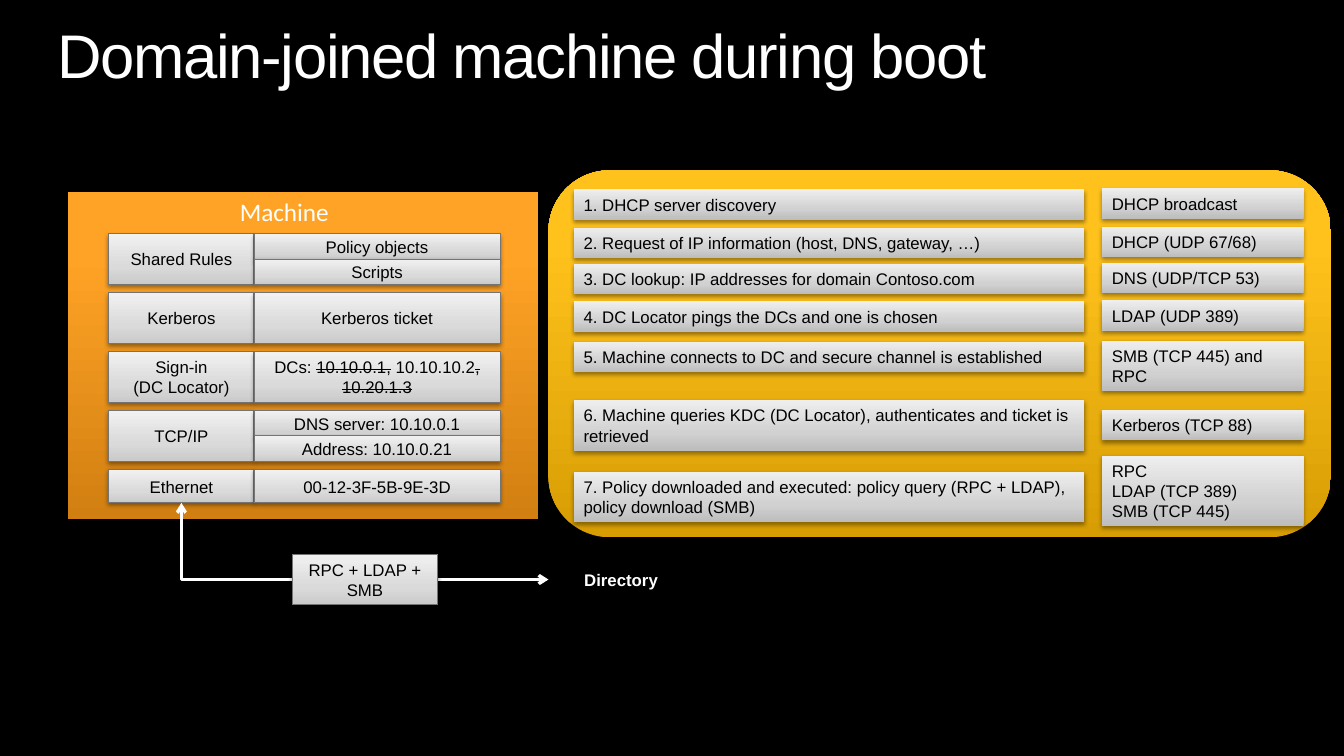
from copy import deepcopy

from lxml.etree import SubElement
from pptx import Presentation
from pptx.dml.color import RGBColor
from pptx.enum.shapes import MSO_CONNECTOR, MSO_SHAPE
from pptx.enum.text import MSO_ANCHOR, MSO_AUTO_SIZE, PP_ALIGN
from pptx.oxml.ns import qn
from pptx.util import Inches, Pt

BLACK = RGBColor(0x00, 0x00, 0x00)
WHITE = RGBColor(0xFF, 0xFF, 0xFF)
BOX_LINE = RGBColor(0x74, 0x74, 0x74)


def gradient(*stops):
    return [(position, RGBColor.from_string(color)) for position, color in stops]


ORANGE = gradient((0, "D17F11"), (0.8, "FFA326"), (1, "FFA327"))
GOLD = gradient((0, "D79D03"), (0.8, "FFC21C"), (1, "FFC21D"))
BOX_GREY = gradient((0, "CACACA"), (0.35, "DADADA"), (1, "F1F1F1"))
LABEL_GREY = gradient((0, "BDBDBD"), (0.35, "D1D1D1"), (1, "EEEEEE"))

# Layer name and the values held in that layer
LAYERS = [
    ("Shared Rules", ["Policy objects", "Scripts"]),
    ("Kerberos", ["Kerberos ticket"]),
    ("Sign-in\n(DC Locator)", ["DCs: 10.10.0.1, 10.10.10.2, 10.20.1.3"]),
    ("TCP/IP", ["DNS server: 10.10.0.1", "Address: 10.10.0.21"]),
    ("Ethernet", ["00-12-3F-5B-9E-3D"]),
]
DC_RUNS = [("DCs: ", False), ("10.10.0.1,", True), (" 10.10.10.2", False), (", 10.20.1.3", True)]

# Offset from the panel top, number of lines, text
STEPS = [
    (0.19, 1, "1. DHCP server discovery"),
    (0.57, 1, "2. Request of IP information (host, DNS, gateway, …)"),
    (0.93, 1, "3. DC lookup: IP addresses for domain Contoso.com"),
    (1.3, 1, "4. DC Locator pings the DCs and one is chosen"),
    (1.7, 1, "5. Machine connects to DC and secure channel is established"),
    (2.28, 2, "6. Machine queries KDC (DC Locator), authenticates and ticket is retrieved"),
    (2.99, 2, "7. Policy downloaded and executed: policy query (RPC + LDAP), policy download (SMB)"),
]
PROTOCOLS = [
    (0.18, 1, "DHCP broadcast"),
    (0.56, 1, "DHCP (UDP 67/68)"),
    (0.92, 1, "DNS (UDP/TCP 53)"),
    (1.29, 1, "LDAP (UDP 389)"),
    (1.69, 2, "SMB (TCP 445) and RPC"),
    (2.38, 1, "Kerberos (TCP 88)"),
    (2.83, 3, "RPC\nLDAP (TCP 389)\nSMB (TCP 445)"),
]


def format_text(text_frame, size=12, color=BLACK, name="Arial", alignment=PP_ALIGN.LEFT, bold=False):
    for paragraph in text_frame.paragraphs:
        paragraph.alignment = alignment
        for run in paragraph.runs:
            run.font.size = Pt(size)
            run.font.name = name
            run.font.color.rgb = color
            run.font.bold = bold


def fill_gradient(shape, stops):
    shape.fill.gradient()
    shape.fill.gradient_angle = 90
    stop_list = shape._element.spPr.find(".//" + qn("a:gsLst"))
    stop_list.append(deepcopy(stop_list[-1]))
    for stop, (position, color) in zip(shape.fill.gradient_stops, stops):
        stop.position = position
        stop.color.rgb = color


def add_shadow(shape, opacity, distance):
    shape.shadow.inherit = False
    effects = shape._element.spPr.find(qn("a:effectLst"))
    shadow = SubElement(effects, qn("a:outerShdw"), blurRad=str(Pt(3.15)),
                        dist=str(Pt(distance)), dir="5400000", rotWithShape="0")
    color = SubElement(shadow, qn("a:srgbClr"), val="000000")
    SubElement(color, qn("a:alpha"), val=str(opacity * 1000))


def add_panel(slide, kind, stops, left, top, width, height):
    panel = slide.shapes.add_shape(kind, Inches(left), Inches(top), Inches(width), Inches(height))
    fill_gradient(panel, stops)
    panel.line.fill.background()
    add_shadow(panel, 35, 1.8)


def add_box(slide, text, left, top, width, height):
    """Outlined grey box with centred text."""
    box = slide.shapes.add_shape(MSO_SHAPE.RECTANGLE, Inches(left), Inches(top), Inches(width), Inches(height))
    fill_gradient(box, BOX_GREY)
    box.line.color.rgb = BOX_LINE
    box.line.width = Pt(0.75)
    add_shadow(box, 38, 1.6)
    box.text_frame.text = text
    box.text_frame.vertical_anchor = MSO_ANCHOR.MIDDLE
    format_text(box.text_frame, alignment=PP_ALIGN.CENTER)
    return box


def add_labels(slide, labels, left, top, width):
    """Column of borderless labels as high as their lines of text."""
    for offset, lines, text in labels:
        label = slide.shapes.add_shape(MSO_SHAPE.RECTANGLE, Inches(left), Inches(top + offset),
                                       Inches(width), Inches(0.1 + 0.2 * lines))
        fill_gradient(label, LABEL_GREY)
        label.line.fill.background()
        add_shadow(label, 38, 1.6)
        label.text_frame.text = text
        label.text_frame.vertical_anchor = MSO_ANCHOR.TOP
        label.text_frame.auto_size = MSO_AUTO_SIZE.SHAPE_TO_FIT_TEXT
        format_text(label.text_frame)


def strike_old_controllers(box):
    paragraph = box.text_frame.paragraphs[0]
    paragraph.clear()
    for text, struck in DC_RUNS:
        run = paragraph.add_run()
        run.text = text
        if struck:
            run._r.get_or_add_rPr().set("strike", "sngStrike")
    format_text(box.text_frame, alignment=PP_ALIGN.CENTER)


def add_title(slide, left, top, width, height):
    title = slide.shapes.title
    title.left, title.top = Inches(left), Inches(top)
    title.width, title.height = Inches(width), Inches(height)
    text_frame = title.text_frame
    text_frame.text = "Domain-joined machine during boot"
    text_frame.margin_left = text_frame.margin_right = 0
    text_frame.margin_top = text_frame.margin_bottom = 0
    text_frame.vertical_anchor = MSO_ANCHOR.TOP
    text_frame.auto_size = MSO_AUTO_SIZE.SHAPE_TO_FIT_TEXT
    format_text(text_frame, size=44, color=WHITE)
    paragraph = text_frame.paragraphs[0]
    paragraph.line_spacing = 0.9
    paragraph.runs[0]._r.get_or_add_rPr().set("spc", "-100")


def add_machine(slide, left, top, width, height):
    """Draw the machine's layers and return the lowest one."""
    add_panel(slide, MSO_SHAPE.RECTANGLE, ORANGE, left, top, width, height)
    heading = slide.shapes.add_textbox(Inches(left + 1.61), Inches(top), Inches(1.1), Inches(0.4))
    heading.text_frame.text = "Machine"
    heading.text_frame.word_wrap = False
    heading.text_frame.auto_size = MSO_AUTO_SIZE.SHAPE_TO_FIT_TEXT
    format_text(heading.text_frame, size=18, color=WHITE, name="Calibri")

    name_left, name_width, value_width = left + 0.41, 1.44, 2.44
    pitch = 2.34 / (len(LAYERS) - 1)
    for row, (name, values) in enumerate(LAYERS):
        row_top = top + 0.42 + row * pitch
        row_height = 0.33 if name == "Ethernet" else 0.5
        name_box = add_box(slide, name, name_left, row_top, name_width, row_height)
        value_height = row_height / len(values)
        for index, value in enumerate(values):
            value_box = add_box(slide, value, name_left + name_width, row_top + index * value_height,
                                value_width, value_height)
            if value.startswith("DCs"):
                strike_old_controllers(value_box)
    return name_box


def add_boot_steps(slide, left, top, width, height):
    add_panel(slide, MSO_SHAPE.ROUNDED_RECTANGLE, GOLD, left, top, width, height)
    add_labels(slide, STEPS, left + 0.25, top, 5.06)
    add_labels(slide, PROTOCOLS, left + 5.49, top, 2)


def add_directory_link(slide, ethernet, left, top, width, height):
    """Place the directory at the given box and link it to the Ethernet layer."""
    directory = add_box(slide, "Directory", left, top, width, height)
    directory.fill.solid()
    directory.fill.fore_color.rgb = BLACK
    directory.line.color.rgb = BLACK
    format_text(directory.text_frame, color=WHITE, alignment=PP_ALIGN.CENTER, bold=True)

    link = slide.shapes.add_connector(MSO_CONNECTOR.ELBOW, directory.left, directory.top + directory.height // 2,
                                      ethernet.left + ethernet.width // 2, ethernet.top + ethernet.height)
    link.begin_connect(directory, 1)
    link.end_connect(ethernet, 2)
    link.line.color.rgb = WHITE
    link.line.width = Pt(2.25)
    properties = link._element.spPr
    properties.find(qn("a:prstGeom")).set("prst", "bentConnector2")
    for end in ("a:headEnd", "a:tailEnd"):
        SubElement(properties.find(qn("a:ln")), qn(end), type="arrow")
    SubElement(properties, qn("a:effectLst"))
    add_box(slide, "RPC + LDAP + SMB", left - 2.54, top, width, height)


def main():
    presentation = Presentation()
    presentation.slide_width, presentation.slide_height = Inches(13.33), Inches(7.5)
    slide = presentation.slides.add_slide(presentation.slide_layouts[5])
    slide.background.fill.solid()
    slide.background.fill.fore_color.rgb = BLACK
    add_title(slide, 0.57, 0.25, 12.19, 0.67)
    ethernet = add_machine(slide, 0.67, 1.9, 4.67, 3.25)
    add_boot_steps(slide, 5.44, 1.69, 7.76, 3.64)
    add_directory_link(slide, ethernet, 5.44, 5.5, 1.44, 0.5)
    presentation.save("out.pptx")


if __name__ == "__main__":
    main()
